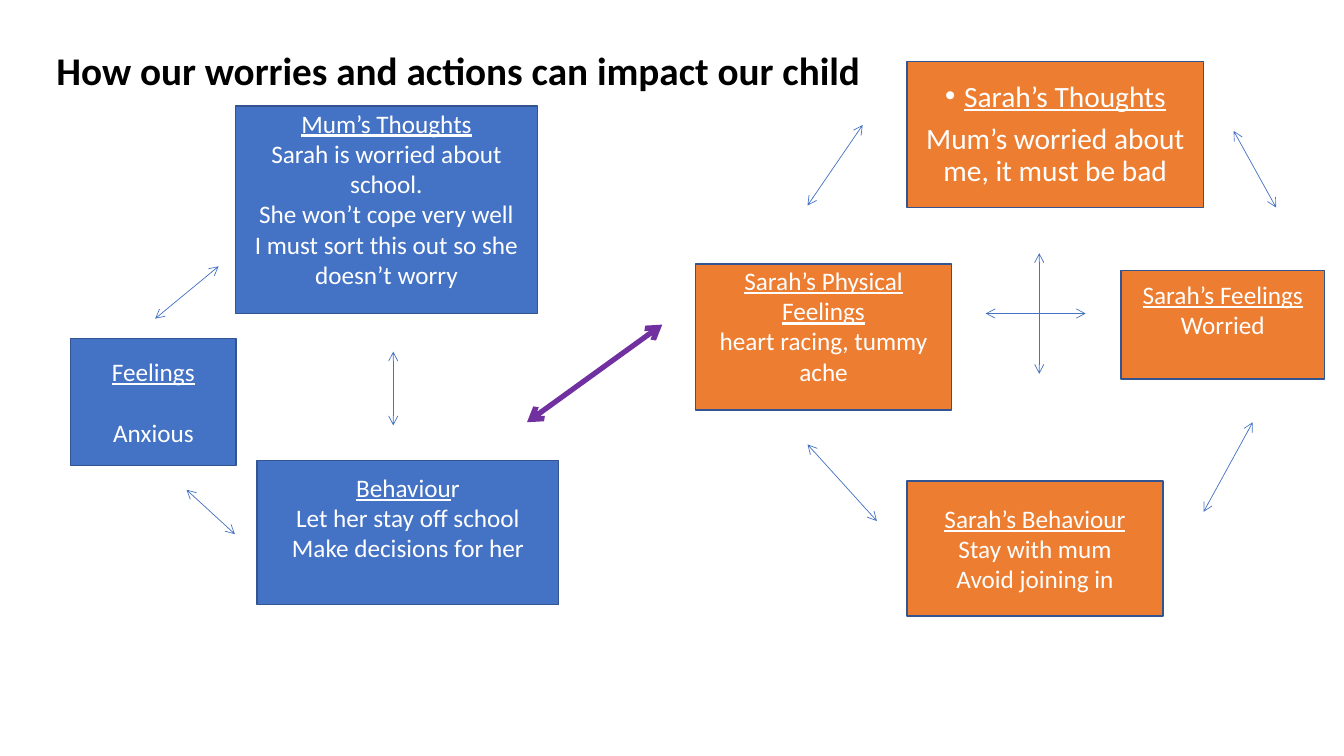
from lxml import etree
from pptx import Presentation
from pptx.dml.color import RGBColor
from pptx.enum.shapes import MSO_CONNECTOR, MSO_SHAPE
from pptx.enum.text import MSO_ANCHOR, MSO_AUTO_SIZE, PP_ALIGN
from pptx.oxml.ns import qn
from pptx.util import Cm, Pt

STRAIGHT = MSO_CONNECTOR.STRAIGHT
RECTANGLE = MSO_SHAPE.RECTANGLE
MIDDLE = MSO_ANCHOR.MIDDLE
FIXED = MSO_AUTO_SIZE.NONE
LEFT, CENTER = PP_ALIGN.LEFT, PP_ALIGN.CENTER

COLOURS = {
    "mum": "4472C4",
    "sarah": "ED7D31",
    "border": "325491",
    "arrow": "4472C4",
    "link": "7030A0",
    "title": "000000",
    "text": "FFFFFF",
}


def colour(name):
    return RGBColor.from_string(COLOURS[name])


def set_all(target, values):
    for name, value in values.items():
        setattr(target, name, value)


class WorrySlide:
    font_name = "Calibri"

    def __init__(self, deck):
        self.page = deck.slides.add_slide(deck.slide_layouts[1])

    def place(self, shape, position):
        sides = ("left", "top", "width", "height")
        set_all(shape, dict(zip(sides, map(Cm, position))))

    def frame(self, shape, top=0.13, bottom=0.13):
        set_all(shape.text_frame, {
            "word_wrap": True,
            "auto_size": FIXED,
            "vertical_anchor": MIDDLE,
            "margin_left": Cm(0.25),
            "margin_right": Cm(0.25),
            "margin_top": Cm(top),
            "margin_bottom": Cm(bottom),
        })
        return shape.text_frame

    def span(self, para, text, size, shade="text", **style):
        span = para.add_run()
        span.text = text
        set_all(span.font, {"name": self.font_name, "size": Pt(size), **style})
        span.font.color.rgb = colour(shade)

    def paint(self, box, fill):
        box.fill.solid()
        box.fill.fore_color.rgb = colour(fill)
        box.line.color.rgb = colour("border")
        box.line.width = Pt(1)

    def title(self, text, position):
        title = self.page.shapes.title
        self.place(title, position)
        para = self.frame(title).paragraphs[0]
        set_all(para, {"alignment": LEFT, "line_spacing": 0.9})
        self.span(para, text, 28, "title", bold=True)

    def thoughts(self, heading, text, position):
        body = self.page.placeholders[1]
        self.place(body, position)
        self.paint(body, "sarah")
        frame = self.frame(body)
        rows = [(heading, True, 0), (text, False, 7.5)]
        for number, (words, is_heading, gap) in enumerate(rows):
            para = frame.add_paragraph() if number else frame.paragraphs[0]
            props = para._p.get_or_add_pPr()
            indent = Cm(0.48) if is_heading else 0
            props.set("marL", str(indent))
            props.set("indent", str(-indent))
            if is_heading:
                etree.SubElement(props, qn("a:buFont"), typeface="Arial")
                etree.SubElement(props, qn("a:buChar"), char="•")
            else:
                etree.SubElement(props, qn("a:buNone"))
            set_all(para, {
                "alignment": CENTER,
                "line_spacing": 0.9,
                "space_before": Pt(gap),
            })
            self.span(para, words, 21, underline=is_heading)

    def box(self, fill, position, heading, lines, ending="", gap=0, **margins):
        box = self.page.shapes.add_shape(RECTANGLE, *map(Cm, position))
        box.shadow.inherit = False
        self.paint(box, fill)
        frame = self.frame(box, **margins)
        para = frame.paragraphs[0]
        para.alignment = CENTER
        self.span(para, heading, 18, underline=True)
        if ending:
            self.span(para, ending, 18, underline=False)
        for line in lines:
            para = frame.add_paragraph()
            set_all(para, {"alignment": CENTER, "space_before": Pt(gap)})
            self.span(para, line, 18, underline=False)

    def arrow(self, ends, shade="arrow", width=0.5):
        arrow = self.page.shapes.add_connector(STRAIGHT, *map(Cm, ends))
        arrow.line.color.rgb = colour(shade)
        arrow.line.width = Pt(width)
        for end in ("a:headEnd", "a:tailEnd"):
            etree.SubElement(arrow.get_or_add_ln(), qn(end), type="arrow")
        etree.SubElement(arrow._element.spPr, qn("a:effectLst"))


def main():
    deck = Presentation()
    set_all(deck, {"slide_width": Cm(33.87), "slide_height": Cm(19.05)})
    slide = WorrySlide(deck)
    slide.title("How our worries and actions can impact our child",
                (1.17, 0, 29.21, 3.68))
    slide.thoughts("Sarah’s Thoughts", "Mum’s worried about me, it must be bad",
                   (22.86, 1.55, 7.47, 3.68))

    slide.box("mum", (5.94, 2.67, 7.6, 5.23), "Mum’s Thoughts",
              ["Sarah is worried about school.", "She won’t cope very well",
               "I must sort this out so she doesn’t worry"],
              top=0, bottom=0.56)
    slide.box("mum", (1.78, 8.53, 4.17, 3.2), "Feelings", ["Anxious"], gap=22)
    slide.box("mum", (6.48, 11.61, 7.6, 3.63), "Behaviou",
              ["Let her stay off school", "Make decisions for her"],
              ending="r", bottom=0.9)
    slide.box("sarah", (17.53, 6.65, 6.45, 3.68), "Sarah’s Physical Feelings",
              ["heart racing, tummy ache"], top=0, bottom=0.56)
    slide.box("sarah", (22.86, 12.12, 6.45, 3.4), "Sarah’s Behaviour",
              ["Stay with mum", "Avoid joining in"])
    slide.box("sarah", (28.25, 6.81, 5.13, 2.74), "Sarah’s Feelings",
              ["Worried"], bottom=0.9)

    mum_arrows = [
        (5.51, 6.71, 3.91, 8.03),
        (5.92, 13.46, 4.7, 12.34),
        (9.91, 8.86, 9.91, 10.72),
    ]
    sarah_arrows = [
        (26.19, 6.38, 26.19, 9.42),
        (27.36, 7.9, 24.84, 7.9),
        (21.74, 3.15, 20.35, 5.18),
        (20.35, 11.2, 22.1, 13.13),
        (31.09, 3.3, 32.16, 5.23),
        (31.57, 10.64, 30.33, 12.9),
    ]
    for ends in mum_arrows + sarah_arrows:
        slide.arrow(ends)
    slide.arrow((16.69, 8.18, 13.28, 10.64), "link", 3.75)
    deck.save("out.pptx")


if __name__ == "__main__":
    main()
